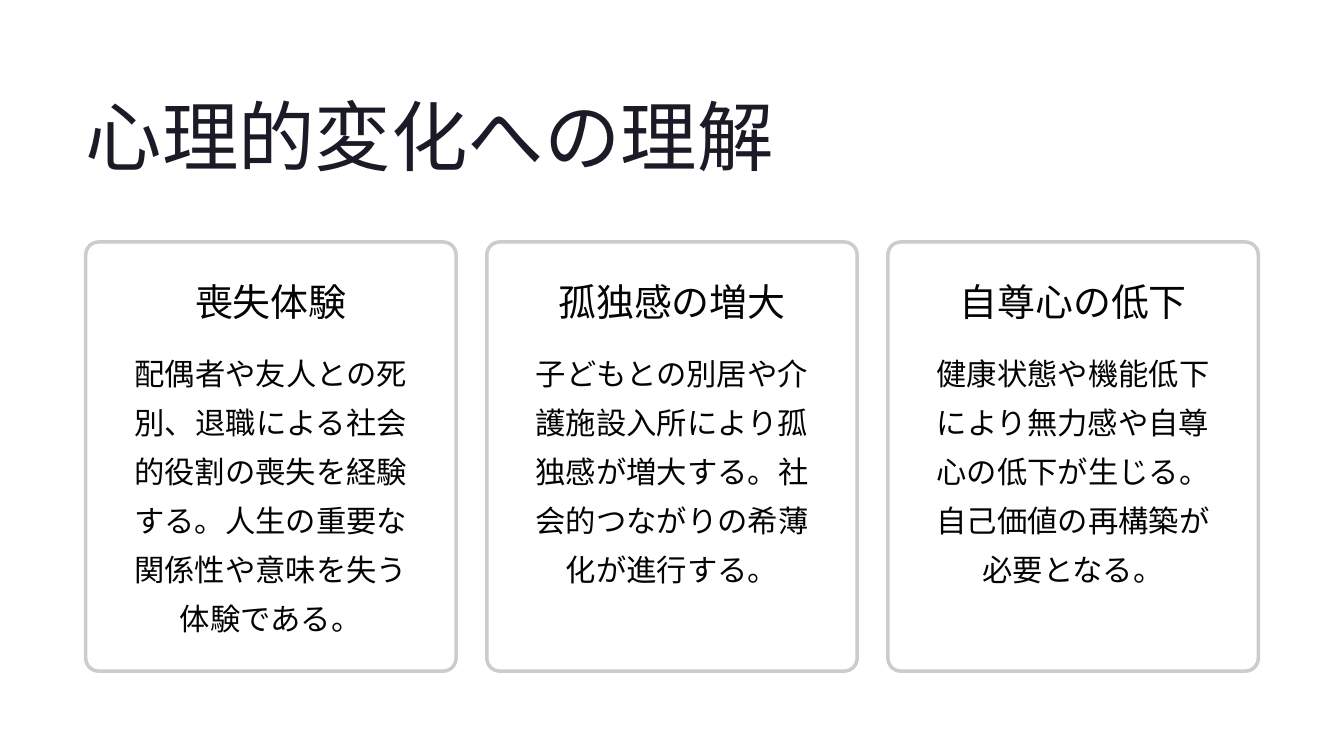
from dataclasses import dataclass

from lxml.etree import SubElement
from pptx import Presentation
from pptx.dml.color import RGBColor
from pptx.enum.shapes import MSO_SHAPE as Preset
from pptx.enum.text import MSO_ANCHOR as Anchor, MSO_AUTO_SIZE as AutoSize, PP_ALIGN as Align
from pptx.oxml.ns import qn
from pptx.shapes.autoshape import Shape
from pptx.slide import Slide
from pptx.util import Inches, Pt

NAVY = RGBColor(0x1B, 0x1B, 0x27)
INK = RGBColor(0x03, 0x03, 0x03)
WHITE = RGBColor(0xFF, 0xFF, 0xFF)
BORDER = RGBColor(0xCC, 0xCC, 0xCC)

MARGIN = 1.02
CARD_TOP, CARD_WIDTH, CARD_HEIGHT = 2.88, 4.41, 5.11
CARD_STEP = 4.775
PADDING = 0.41
INNER_WIDTH = CARD_WIDTH - 2 * PADDING
HEADING_HEIGHT = 0.57
BODY_TOP = 4.08
LINE_HEIGHT = 42


@dataclass(frozen=True)
class TextStyle:
    font: str
    size: float
    leading: float
    color: RGBColor
    align: Align
    wrap: bool = False


@dataclass(frozen=True)
class Card:
    heading: str
    body: str
    lines: int


TITLE = TextStyle("Inter", 65.5, 82, NAVY, Align.LEFT)
HEADING = TextStyle("Inter", 32.5, 41, INK, Align.CENTER)
BODY = TextStyle("Lato", 26, LINE_HEIGHT, INK, Align.CENTER, wrap=True)

CARDS = [
    Card("喪失体験", "配偶者や友人との死別、退職による社会的役割の喪失を経験する。人生の重要な関係性や意味を失う体験である。", 6),
    Card("孤独感の増大", "子どもとの別居や介護施設入所により孤独感が増大する。社会的つながりの希薄化が進行する。", 5),
    Card("自尊心の低下", "健康状態や機能低下により無力感や自尊心の低下が生じる。自己価値の再構築が必要となる。", 5),
]


def write(holder: Shape, text: str, style: TextStyle) -> None:
    frame = holder.text_frame
    frame.text = text
    frame.auto_size = AutoSize.NONE
    frame.word_wrap = style.wrap
    frame.vertical_anchor = Anchor.TOP
    frame.margin_left = frame.margin_right = frame.margin_top = frame.margin_bottom = 0
    paragraph = frame.paragraphs[0]
    paragraph.alignment = style.align
    paragraph.line_spacing = Pt(style.leading)
    paragraph.font.name = style.font
    paragraph.font.size = Pt(style.size)
    paragraph.font.color.rgb = style.color


def add_label(slide: Slide, left: float, top: float, height: float, text: str, style: TextStyle) -> None:
    label = slide.shapes.add_textbox(Inches(left), Inches(top), Inches(INNER_WIDTH), Inches(height))
    write(label, text, style)


def add_card(slide: Slide, column: int, card: Card) -> None:
    left = MARGIN + column * CARD_STEP
    panel = slide.shapes.add_shape(
        Preset.ROUNDED_RECTANGLE, Inches(left), Inches(CARD_TOP), Inches(CARD_WIDTH), Inches(CARD_HEIGHT)
    )
    panel.adjustments[0] = 0.035
    panel.shadow.inherit = False
    panel.fill.solid()
    panel.fill.fore_color.rgb = WHITE
    fill_color = panel.fill._xPr.find(qn("a:solidFill"))[0]
    SubElement(fill_color, qn("a:alpha"), val="95000")
    panel.line.color.rgb = BORDER
    panel.line.width = Pt(3)
    add_label(slide, left + PADDING, CARD_TOP + PADDING, HEADING_HEIGHT, card.heading, HEADING)
    add_label(slide, left + PADDING, BODY_TOP, card.lines * LINE_HEIGHT / 72, card.body, BODY)


def main() -> None:
    deck = Presentation()
    deck.slide_width, deck.slide_height = Inches(16), Inches(9)
    slide = deck.slides.add_slide(deck.slide_layouts[5])
    title = slide.shapes.title
    title.left, title.top = Inches(MARGIN), Inches(1.01)
    title.width, title.height = Inches(9.13), Inches(1.14)
    write(title, "心理的変化への理解", TITLE)
    for column, card in enumerate(CARDS):
        add_card(slide, column, card)
    deck.save("out.pptx")


if __name__ == "__main__":
    main()
